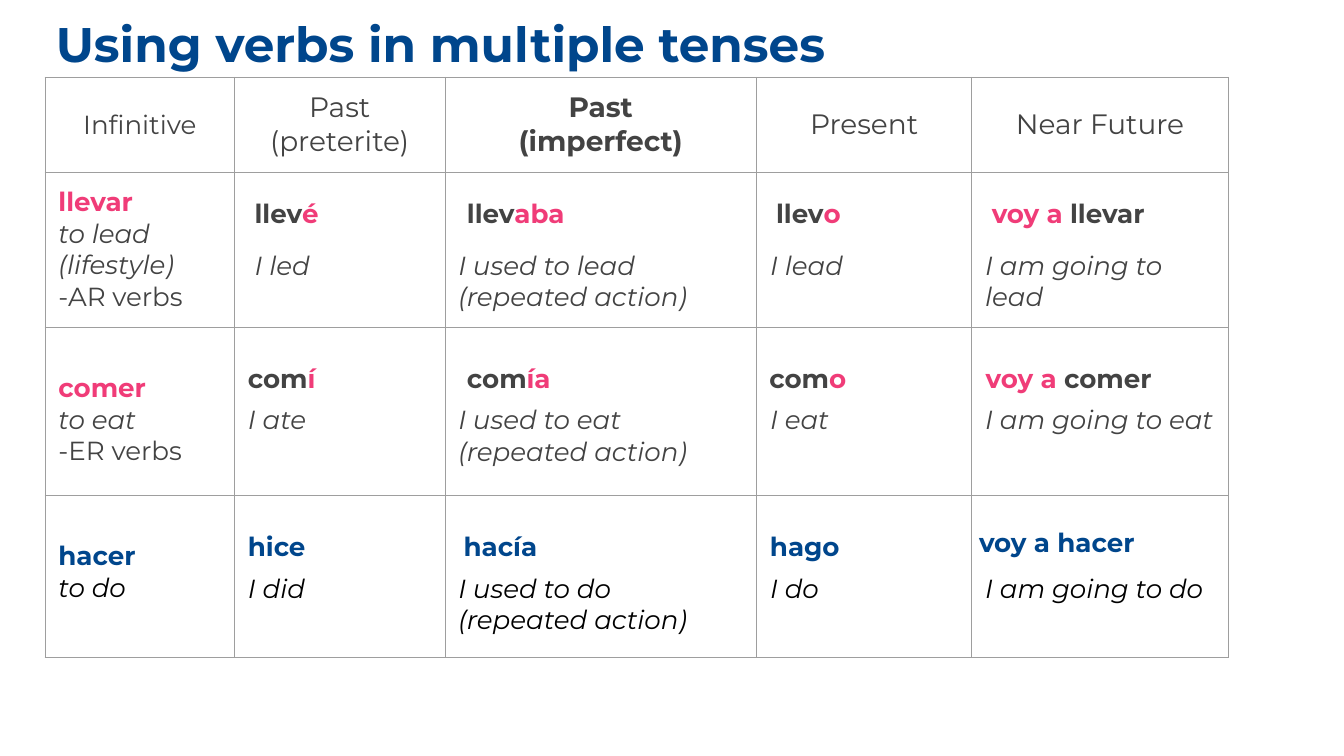
import pptx
import pptx.util
import pptx.dml.color
import pptx.enum.text
import pptx.oxml
import pptx.oxml.ns

Inches = pptx.util.Inches
Pt = pptx.util.Pt
ALIGN = pptx.enum.text.PP_ALIGN
ANCHOR = pptx.enum.text.MSO_ANCHOR
FIT = pptx.enum.text.MSO_AUTO_SIZE
HUE = {"blue": "00468C", "pink": "F03C78", "gray": "434343",
       "black": "000000", "white": "FFFFFF", "rule": "9E9E9E"}


def write(para, text, size=28, color="gray", bold=False, italic=False):
    """Add text to a paragraph; a newline becomes a line break."""
    for i, part in enumerate(text.split("\n")):
        if i:
            para.add_line_break()
        run = para.add_run()
        run.text = part
        font = run.font
        font.name, font.size = "Montserrat", Pt(size)
        font.bold, font.italic = bold, italic
        font.color.rgb = pptx.dml.color.RGBColor.from_string(HUE[color])


def frame_cell(cell, top=0.2, left=0.2):
    """Set the margins, borders and fill of a table cell."""
    cell.margin_top, cell.margin_left = Inches(top), Inches(left)
    cell.margin_right = cell.margin_bottom = Inches(0.2)
    props = cell._tc.get_or_add_tcPr()
    for side in ("lnL", "lnR", "lnT", "lnB"):
        props.append(pptx.oxml.parse_xml(
            f'<a:{side} {pptx.oxml.ns.nsdecls("a")} w="{Pt(0.75)}"><a:solidFill>'
            f'<a:srgbClr val="{HUE["rule"]}"/></a:solidFill></a:{side}>'))
    cell.fill.solid()
    cell.fill.fore_color.rgb = pptx.dml.color.RGBColor.from_string(HUE["white"])


deck = pptx.Presentation()
deck.slide_width, deck.slide_height = Inches(20), Inches(11.25)
slide = deck.slides.add_slide(deck.slide_layouts[5])

# Title
title = slide.shapes.title
title.left, title.top = Inches(0.83), Inches(0.08)
title.width, title.height = Inches(17.99), Inches(1.78)
body = title.text_frame
body.margin_left = body.margin_right = body.margin_top = body.margin_bottom = 0
body.vertical_anchor, body.auto_size = ANCHOR.TOP, FIT.NONE
para = body.paragraphs[0]
para.alignment, para.line_spacing = ALIGN.LEFT, 1.15
write(para, "Using verbs in multiple tenses", size=52, color="blue", bold=True)

# Table grid
cols = [2.82, 3.13, 4.64, 3.2, 3.82]
rows = [1.41, 2.29, 2.51, 2.4]
table = slide.shapes.add_table(len(rows), len(cols), Inches(0.67), Inches(1.15),
                               Inches(sum(cols)), Inches(sum(rows))).table
for col, width in zip(table.columns, cols):
    col.width = Inches(width)
for row, height in zip(table.rows, rows):
    row.height = Inches(height)

# Header row
heads = ["Infinitive", "Past (preterite)", "Past\n(imperfect)", "Present", "Near Future"]
for c, head in enumerate(heads):
    cell = table.cell(0, c)
    frame_cell(cell)
    cell.vertical_anchor = ANCHOR.MIDDLE
    para = cell.text_frame.paragraphs[0]
    para.alignment = ALIGN.CENTER
    write(para, head, size=28 if c == 0 else 30, bold=c == 2)

# Verb rows: infinitive, meaning, ending, hue of verb, hue of meaning, translations
verbs = [
    ("llevar", "to lead (lifestyle)", "-AR verbs", "pink", "gray",
     ["I led", "I used to lead\n(repeated action)", "I lead", "I am going to lead"]),
    ("comer", "to eat", "-ER verbs", "pink", "gray",
     ["I ate", "I used to eat\n(repeated action)", "I eat", "I am going to eat"]),
    ("hacer", "to do", "", "blue", "black",
     ["I did", "I used to do\n(repeated action)", "I do", "I am going to do"]),
]
for r, (verb, sense, kind, hue, tone, lines) in enumerate(verbs, 1):
    cell = table.cell(r, 0)
    frame_cell(cell, top=0.2 if r == 1 else 0.67)
    write(cell.text_frame.paragraphs[0], verb, color=hue, bold=True)
    para = cell.text_frame.add_paragraph()
    write(para, sense, color=tone, italic=True)
    if kind:
        para.add_line_break()
        write(para, kind, color=tone)
    for c, line in enumerate(lines, 1):
        cell = table.cell(r, c)
        frame_cell(cell, top=1.15, left=0.3 if line == "I led" else 0.2)
        write(cell.text_frame.paragraphs[0], line, color=tone, italic=True)

# Verb forms above the translations: left, top, width, runs
forms = [
    (3.69, 2.84, 1.69, [("llev", "gray"), ("é", "pink")]),
    (6.85, 2.84, 1.69, [("llev", "gray"), ("aba", "pink")]),
    (11.45, 2.84, 1.69, [("llev", "gray"), ("o", "pink")]),
    (14.66, 2.84, 3.41, [("voy a ", "pink"), ("llevar", "gray")]),
    (3.59, 5.29, 1.69, [("com", "gray"), ("í", "pink")]),
    (6.85, 5.29, 1.69, [("com", "gray"), ("ía", "pink")]),
    (11.35, 5.29, 1.69, [("com", "gray"), ("o", "pink")]),
    (14.57, 5.29, 3.41, [("voy a ", "pink"), ("comer", "gray")]),
    (3.59, 7.8, 1.69, [("hice", "blue")]),
    (6.8, 7.8, 1.69, [("hacía", "blue")]),
    (11.36, 7.8, 1.69, [("hago", "blue")]),
    (14.47, 7.74, 3.41, [("voy a hacer", "blue")]),
]
for left, top, width, runs in forms:
    box = slide.shapes.add_textbox(Inches(left), Inches(top), Inches(width), Inches(0.67))
    body = box.text_frame
    body.word_wrap, body.auto_size = True, FIT.SHAPE_TO_FIT_TEXT
    body.margin_left = body.margin_right = Inches(0.1)
    body.margin_top = body.margin_bottom = Inches(0.1)
    for text, hue in runs:
        write(body.paragraphs[0], text, color=hue, bold=True)

deck.save("out.pptx")
